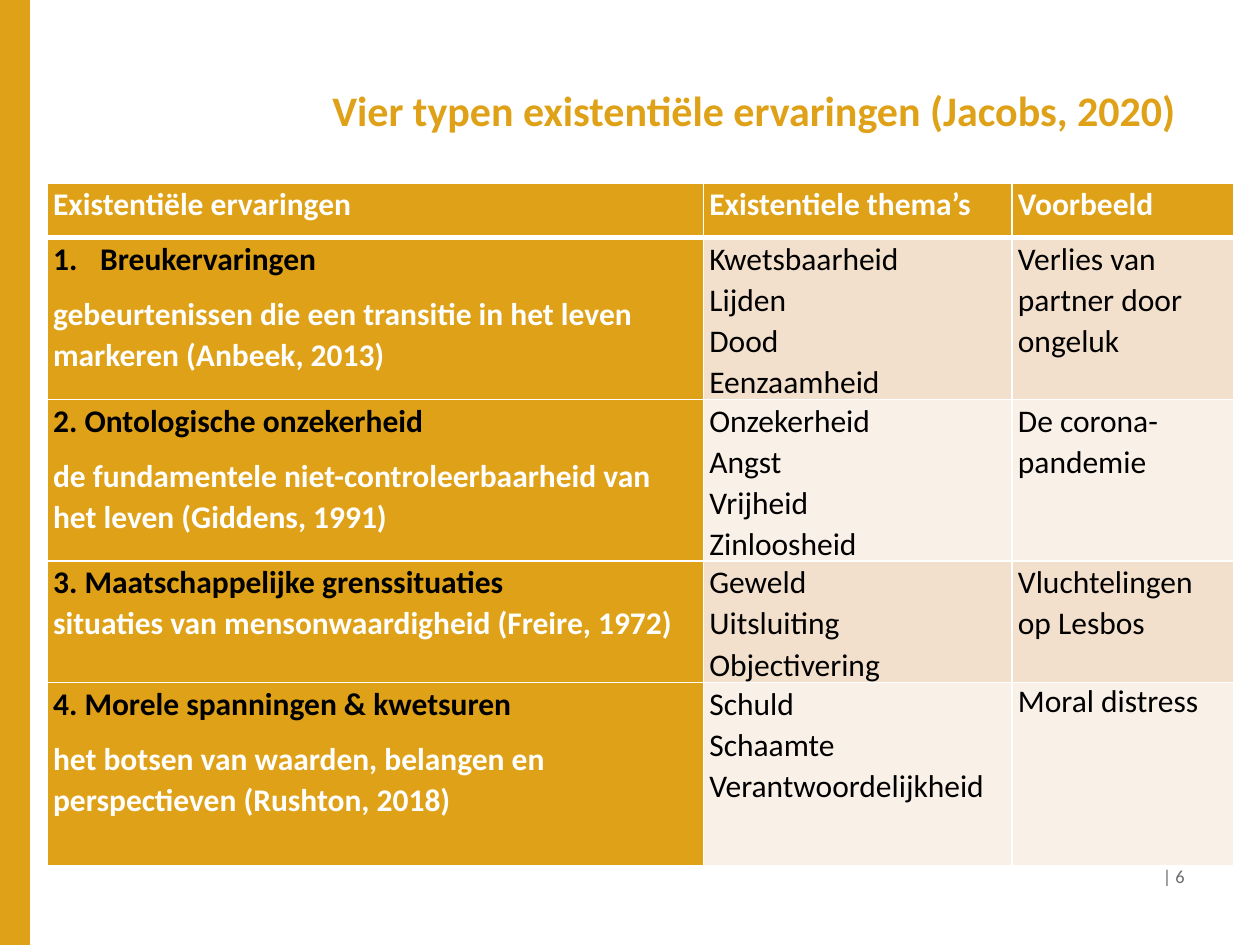
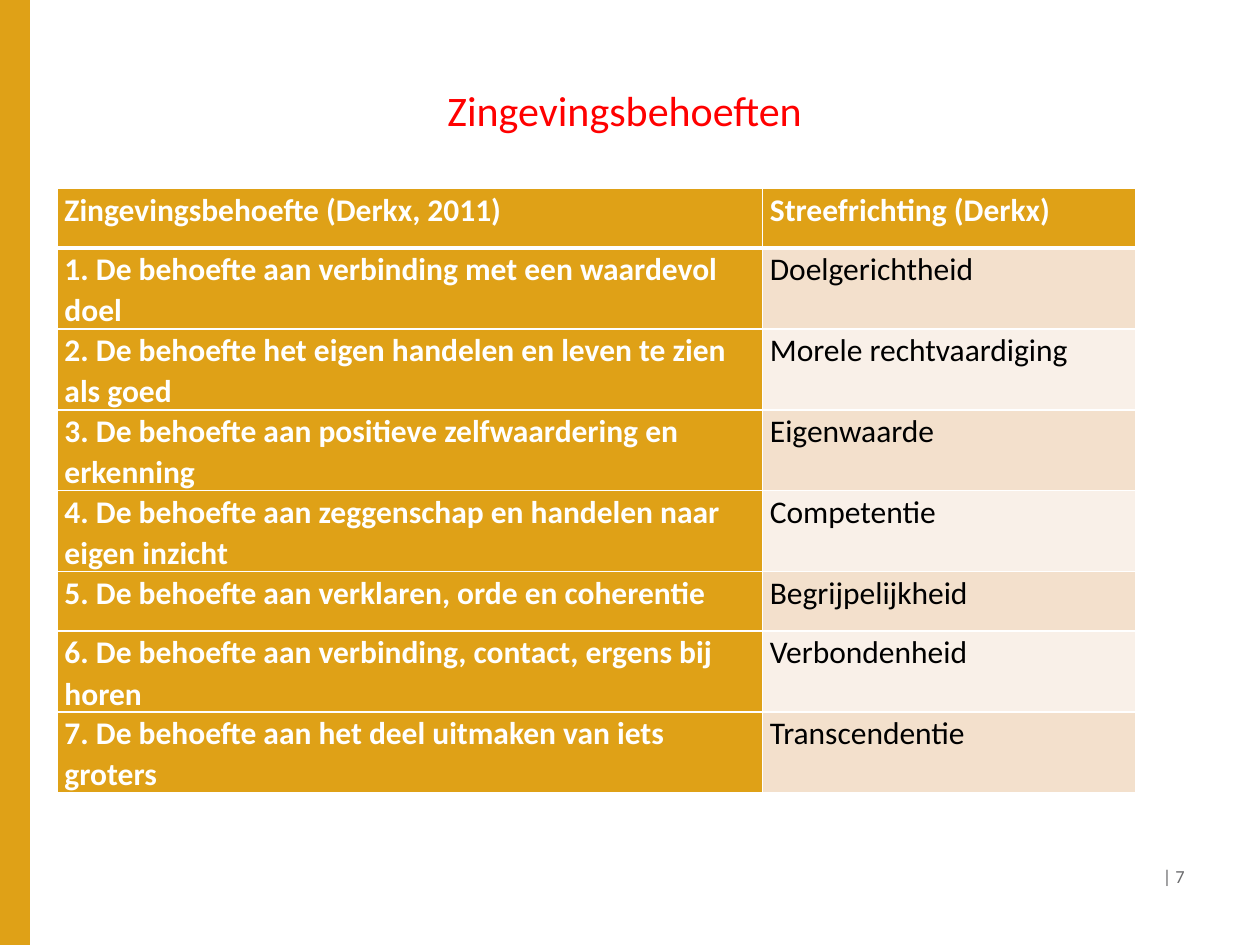
from lxml.etree import SubElement
from pptx import Presentation
from pptx.dml.color import RGBColor
from pptx.enum.shapes import MSO_SHAPE
from pptx.enum.text import PP_ALIGN
from pptx.oxml.ns import qn
from pptx.util import Cm, Pt

COLORS = {
    "gold": "DFA117", "white": "FFFFFF", "black": "000000", "red": "FF0000",
    "gray": "6B6B6D", "sand": "F3E0CC", "cream": "F9F0E8",
}
FACE = "Calibri"
TIGHT = 1.07  # line spacing in the tables


def rgb(name):
    return RGBColor.from_string(COLORS[name])


def style(para, size, color, bold=False):
    font = para.font
    font.name, font.size, font.bold = FACE, Pt(size), bold
    font.color.rgb = rgb(color)


def add_text(slide, box, text, size, color, bold=False, inset=None, align=None):
    frame = slide.shapes.add_textbox(*map(Cm, box)).text_frame
    frame.word_wrap = True
    if inset is not None:
        frame.margin_left = frame.margin_right = Cm(inset)
        frame.margin_top = frame.margin_bottom = Cm(inset)
    para = frame.paragraphs[0]
    para.text = text
    para.alignment = align
    style(para, size, color, bold)


def add_base(deck, title, left, color, bold, page):
    """Side band, page number and title."""
    slide = deck.slides.add_slide(deck.slide_layouts[6])
    for x, width, tint in ((0, 0.61, "gold"), (0.61, 0.08, "white")):
        band = slide.shapes.add_shape(
            MSO_SHAPE.RECTANGLE, Cm(x), Cm(-0.02), Cm(width), Cm(19.07))
        band.shadow.inherit = False
        band.fill.solid()
        band.fill.fore_color.rgb = rgb(tint)
        band.line.color.rgb = rgb(tint)
        band.line.width = Pt(0.75)
    add_text(slide, (22.3, 17.32, 1.83, 1.02), f"| {page}", 10.5, "gray",
             align=PP_ALIGN.RIGHT)
    add_text(slide, (left, 1.7, 24.13 - left, 2.13), title, 24, color, bold, 0)
    return slide


def add_edges(cell, row):
    """White cell borders, thick between header and body."""
    props = cell._tc.get_or_add_tcPr()
    for side in "LRTB":
        thick = (row, side) in ((0, "B"), (1, "T"))
        line = SubElement(props, qn(f"a:ln{side}"), w=str(Pt(3 if thick else 1)))
        fill = SubElement(line, qn("a:solidFill"))
        SubElement(fill, qn("a:srgbClr"), val=COLORS["white"])


def add_number(para):
    props = para._p.get_or_add_pPr()
    props.set("marL", str(Cm(0.95)))
    props.set("indent", str(Cm(-0.95)))
    SubElement(props, qn("a:buAutoNum"), type="arabicPeriod")


def fill_cell(cell, row, col, lines, inset, after):
    head = row == 0 or col == 0
    add_edges(cell, row)
    cell.margin_left = cell.margin_right = Cm(inset)
    cell.margin_top = cell.margin_bottom = 0
    cell.fill.solid()
    tint = "gold" if head else ("cream", "sand")[row % 2]
    cell.fill.fore_color.rgb = rgb(tint)
    frame = cell.text_frame
    for i, text in enumerate(lines):
        para = frame.add_paragraph() if i else frame.paragraphs[0]
        if text.startswith("#"):
            add_number(para)
        para.text = text.lstrip("#")
        para.line_spacing = TIGHT
        if after:
            para.space_after = Pt(after)
        # A row head with two lines opens with its name in black
        name = col == 0 and i == 0 and len(lines) > 1
        style(para, 18, "white" if head and not name else "black", head)


def add_grid(slide, spot, widths, heights, rows, inset, gaps=()):
    """Table; gaps names the rows whose heads have spaced paragraphs."""
    table = slide.shapes.add_table(
        len(rows), len(widths), *map(Cm, spot),
        Cm(sum(widths)), Cm(sum(heights))).table
    table.first_row = table.horz_banding = False
    for col, width in zip(table.columns, widths):
        col.width = Cm(width)
    for r, (height, texts) in enumerate(zip(heights, rows)):
        table.rows[r].height = Cm(height)
        for c, text in enumerate(texts):
            after = 8 if c == 0 and r in gaps else 0
            fill_cell(table.cell(r, c), r, c, text.split("\n"), inset, after)
    return table


TYPES = [
    ("Existentiële ervaringen", "Existentiele thema’s", "Voorbeeld"),
    ("#Breukervaringen\ngebeurtenissen die een transitie in het leven "
     "markeren (Anbeek, 2013)",
     "Kwetsbaarheid\nLijden\nDood\nEenzaamheid",
     "Verlies van partner door ongeluk"),
    ("2. Ontologische onzekerheid\nde fundamentele niet-controleerbaarheid "
     "van het leven (Giddens, 1991)",
     "Onzekerheid\nAngst\nVrijheid\nZinloosheid", "De corona-pandemie"),
    ("3. Maatschappelijke grenssituaties\n"
     "situaties van mensonwaardigheid (Freire, 1972)",
     "Geweld\nUitsluiting\nObjectivering", "Vluchtelingen op Lesbos"),
    ("4. Morele spanningen & kwetsuren\nhet botsen van waarden, belangen en "
     "perspectieven (Rushton, 2018)",
     "Schuld\nSchaamte\nVerantwoordelijkheid", "Moral distress"),
]
NEEDS = [
    ("Zingevingsbehoefte (Derkx, 2011)", "Streefrichting (Derkx)"),
    ("1. De behoefte aan verbinding met een waardevol doel", "Doelgerichtheid"),
    ("2. De behoefte het eigen handelen en leven te zien als goed",
     "Morele rechtvaardiging"),
    ("3. De behoefte aan positieve zelfwaardering en erkenning", "Eigenwaarde"),
    ("4. De behoefte aan zeggenschap en handelen naar eigen inzicht",
     "Competentie"),
    ("5. De behoefte aan verklaren, orde en coherentie", "Begrijpelijkheid"),
    ("6. De behoefte aan verbinding, contact, ergens bij horen",
     "Verbondenheid"),
    ("7. De behoefte aan het deel uitmaken van iets groters", "Transcendentie"),
]


def main():
    deck = Presentation()
    deck.slide_width, deck.slide_height = Cm(25.4), Cm(19.05)

    # Four types of experience
    slide = add_base(deck, "Vier typen existentiële ervaringen (Jacobs, 2020)",
                     6.7, "gold", True, 6)
    table = add_grid(slide, (0.95, 3.69), (13.23, 6.22, 4.47),
                     (1.1, 3.1, 3.1, 2.32, 3.7), TYPES, 0.12, (1, 2, 4))
    table.cell(4, 2).text_frame.paragraphs[0].line_spacing = 1.0

    # Seven needs
    slide = add_base(deck, "Zingevingsbehoeften", 9.02, "red", False, 7)
    heights = [1.2] * len(NEEDS)
    heights[2] = 1.6
    add_grid(slide, (1.15, 3.8), (14.22, 7.52), heights, NEEDS, 0.15)

    deck.save("out.pptx")


if __name__ == "__main__":
    main()
